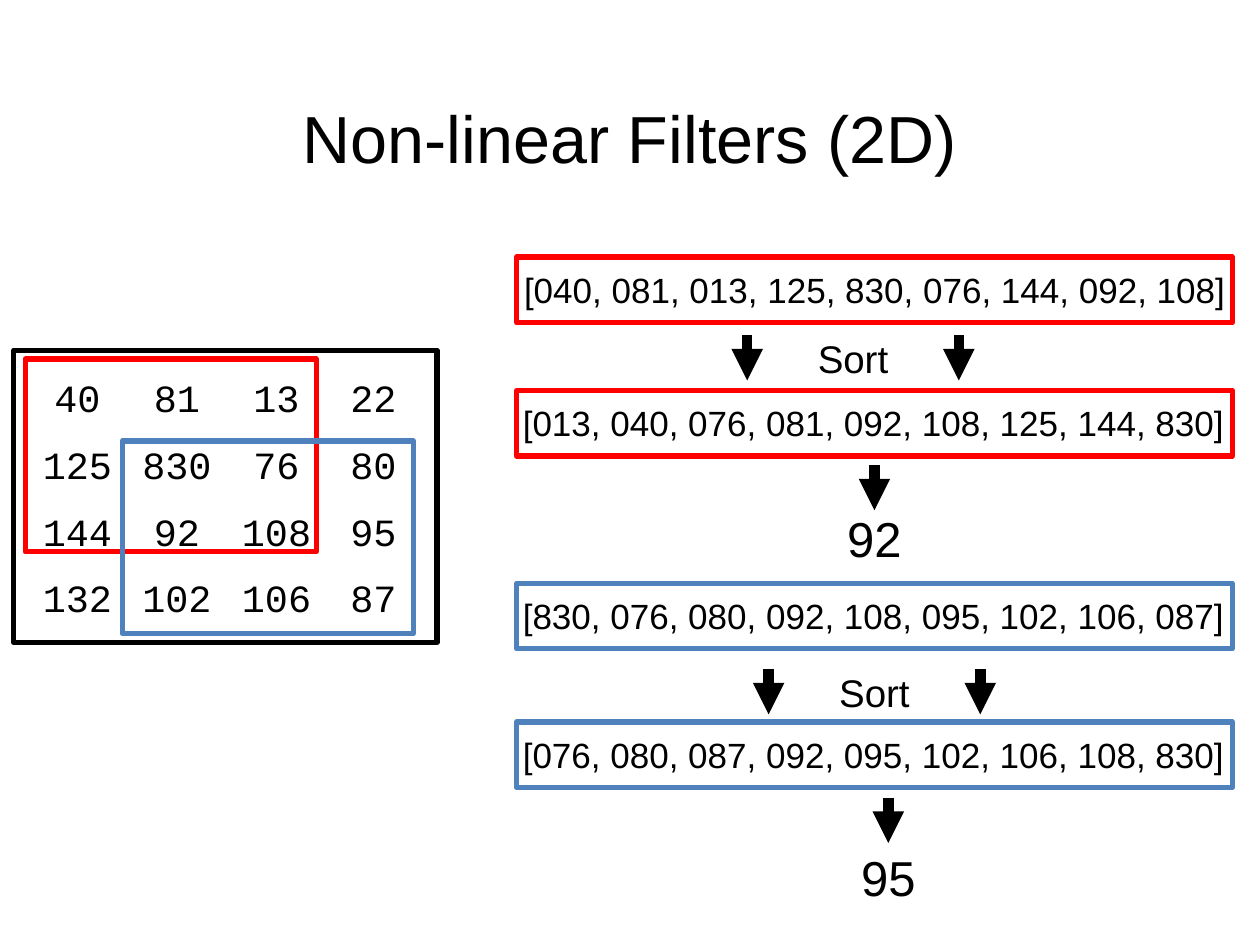
import pptx
import pptx.dml.color
import pptx.enum.shapes
import pptx.enum.text
import pptx.oxml
import pptx.oxml.ns
import pptx.util

Inches = pptx.util.Inches
Pt = pptx.util.Pt
RGBColor = pptx.dml.color.RGBColor

BLACK = RGBColor(0x00, 0x00, 0x00)
RED = RGBColor(0xFF, 0x00, 0x00)
BLUE = RGBColor(0x4F, 0x81, 0xBD)

TITLE_LAYOUT = 5
GRID_LEFTS = (0.23, 1.02, 1.81, 2.58)
GRID_TOP, ROW_STEP = 2.92, 0.53
GRID = (
    (40, 81, 13, 22),
    (125, 830, 76, 80),
    (144, 92, 108, 95),
    (132, 102, 106, 87),
)
# top of the frame, left of the text, colour, numbers
LISTS = (
    (2.04, 4.03, RED, "[040, 081, 013, 125, 830, 076, 144, 092, 108]"),
    (3.10, 4.02, RED, "[013, 040, 076, 081, 092, 108, 125, 144, 830]"),
    (4.63, 4.02, BLUE, "[830, 076, 080, 092, 108, 095, 102, 106, 087]"),
    (5.73, 4.02, BLUE, "[076, 080, 087, 092, 095, 102, 106, 108, 830]"),
)
SORTS = ((5.93, 2.66), (6.10, 5.31))
# arrow x, arrow top, text top, median
MEDIANS = ((6.94, 3.69, 3.99, "92"), (7.05, 6.33, 6.68, "95"))


class FilterSlide:
    font = "Arial"
    grid_font = "Courier New"
    frame_width = Pt(3)
    arrow_width = Pt(6)
    arrow_length = 0.36

    def __init__(self, deck):
        self.page = deck.slides.add_slide(deck.slide_layouts[TITLE_LAYOUT])

    def fill_text(self, box, text, size, font=None, **spacing):
        frame = box.text_frame
        frame.word_wrap = True
        para = frame.paragraphs[0]
        paragraph_format = {"alignment": pptx.enum.text.PP_ALIGN.CENTER, **spacing}
        for name, value in paragraph_format.items():
            setattr(para, name, value)
        span = para.add_run()
        span.text = text
        for name, value in {"name": font or self.font, "size": Pt(size)}.items():
            setattr(span.font, name, value)
        span.font.color.rgb = BLACK

    def title(self, text):
        box = self.page.shapes.title
        place = {"left": 0.69, "top": 0.4, "width": 8.62, "height": 1.45}
        for name, value in place.items():
            setattr(box, name, Inches(value))
        box.text_frame.vertical_anchor = pptx.enum.text.MSO_ANCHOR.MIDDLE
        self.fill_text(box, text, 38, line_spacing=0.9)

    def text(self, text, left, top, width, height, size, font=None):
        box = self.page.shapes.add_textbox(*map(Inches, (left, top, width, height)))
        self.fill_text(box, text, size, font)

    def frame(self, left, top, width, height, color):
        shape = self.page.shapes.add_shape(
            pptx.enum.shapes.MSO_SHAPE.RECTANGLE,
            *map(Inches, (left, top, width, height)))
        shape.shadow.inherit = False
        shape.fill.background()
        shape.line.color.rgb = color
        shape.line.width = self.frame_width

    def down_arrow(self, x, top):
        arrow = self.page.shapes.add_connector(
            pptx.enum.shapes.MSO_CONNECTOR.STRAIGHT,
            *map(Inches, (x, top, x, top + self.arrow_length)))
        arrow.line.color.rgb = BLACK
        arrow.line.width = self.arrow_width
        qn = pptx.oxml.ns.qn
        line = arrow.line._get_or_add_ln()
        line.append(line.makeelement(qn("a:tailEnd"), {"type": "triangle"}))
        properties = arrow._element.spPr
        properties.append(properties.makeelement(qn("a:effectLst"), {}))

    def number_list(self, top, text_left, color, numbers):
        self.text(numbers, text_left, top + 0.04, 5.83, 0.44, 20)
        self.frame(4.1, top, 5.68, 0.52, color)

    def sort_step(self, left, top):
        """Draw the word Sort between two arrows."""
        width = 1.68
        self.down_arrow(left, top)
        self.text("Sort", left, top - 0.05, width, 0.47, 22)
        self.down_arrow(left + width, top)

    def median(self, x, arrow_top, text_top, value):
        width = 1.15
        self.down_arrow(x, arrow_top)
        self.text(value, x - width / 2, text_top, width, 0.57, 28)

    def pixel_grid(self):
        """Draw the pixel values and the two filter windows on them."""
        self.frame(0.2, 2.85, 2.31, 1.53, RED)
        self.frame(0.11, 2.78, 3.36, 2.32, BLACK)
        for row, values in enumerate(GRID):
            for left, value in zip(GRID_LEFTS, values):
                self.text(str(value), left, GRID_TOP + row * ROW_STEP,
                          0.77, 0.39, 22, self.grid_font)
        self.frame(0.97, 3.5, 2.31, 1.53, BLUE)


def main():
    deck = pptx.Presentation()
    deck.slide_width, deck.slide_height = Inches(10), Inches(7.5)
    slide = FilterSlide(deck)
    slide.title("Non-linear Filters (2D)")
    for row in LISTS:
        slide.number_list(*row)
    for step in SORTS:
        slide.sort_step(*step)
    for result in MEDIANS:
        slide.median(*result)
    slide.pixel_grid()
    deck.save("out.pptx")


if __name__ == "__main__":
    main()
